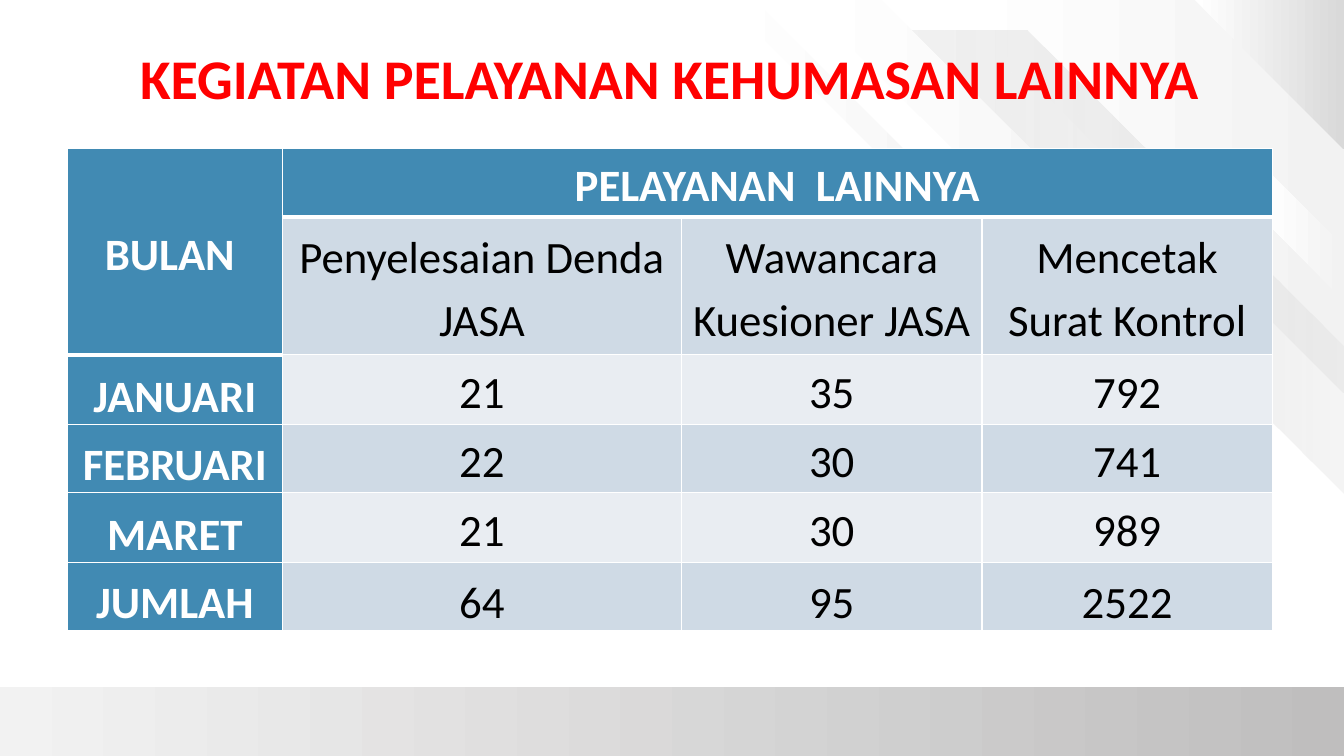
from dataclasses import dataclass

from lxml.etree import SubElement
from pptx import Presentation
from pptx.dml.color import RGBColor
from pptx.enum.shapes import MSO_SHAPE
from pptx.enum.text import MSO_ANCHOR, MSO_AUTO_SIZE, PP_ALIGN
from pptx.oxml.ns import qn
from pptx.util import Inches, Pt


@dataclass(frozen=True)
class Theme:
    font: str = "Calibri"
    title_size: int = 40
    table_size: int = 32
    title: str = "FF0000"
    header: str = "418AB3"
    header_text: str = "FFFFFF"
    body_text: str = "000000"
    bands: tuple = ("E9EDF2", "CFDAE5")
    rule: str = "FFFFFF"
    white: str = "FFFFFF"
    pale: str = "F2F2F2"
    grey: str = "D9D9D9"
    dark: str = "BFBEBE"


THEME = Theme()

# Content
TITLE = "KEGIATAN PELAYANAN KEHUMASAN LAINNYA"
ROWS = [
    ("BULAN ", "PELAYANAN  LAINNYA", "", ""),
    ("", "Penyelesaian Denda JASA", "Wawancara Kuesioner JASA", "Mencetak Surat Kontrol"),
    ("JANUARI", "21", "35", "792"),
    ("FEBRUARI", "22", "30", "741"),
    ("MARET", "21", "30", "989"),
    ("JUMLAH", "64", "95", "2522"),
]
COLUMN_WIDTHS = (2.13, 3.96, 2.98, 2.88)
ROW_HEIGHTS = (0.68, 1.37, 0.69, 0.68, 0.69, 0.68)
TABLE_LEFT, TABLE_TOP = 0.67, 1.47
WIDTH, HEIGHT = 13.33, 7.5
FOOTER_TOP = 6.82

# Background bands: outline, first colour, last colour, opacity of the last colour
BANDS = [
    ([(WIDTH, 0), (9.43, 0), (WIDTH, 3.9)], THEME.white, THEME.pale, 100),
    ([(WIDTH, 3.44), (10.19, 0.3), (8.71, 0.3), (WIDTH, 4.91)], THEME.pale, THEME.grey, 26),
    ([(WIDTH, 2.45), (12.49, 1.61), (12.49, 2.14), (WIDTH, 2.98)], THEME.white, THEME.pale, 100),
    ([(11.57, 2.82), (8.74, 0), (7.97, 0), (10.8, 2.82)], THEME.white, THEME.pale, 100),
    ([(WIDTH, 0), (11.85, 0), (WIDTH, 1.48)], THEME.white, THEME.grey, 100),
    ([(7.48, 0), (10.01, 2.53), (10.01, 2.82), (7.18, 0)], THEME.white, THEME.pale, 100),
]


def paint_gradient(shape, first, last, angle=0, last_opacity=100):
    shape.shadow.inherit = False
    shape.line.fill.background()
    shape.fill.gradient()
    shape.fill.gradient_angle = angle
    stops = shape.fill.gradient_stops
    for stop, colour in zip(stops, (first, last)):
        stop.color.rgb = RGBColor.from_string(colour)
    if last_opacity < 100:
        colour_node = list(shape.element.spPr.iter(qn("a:srgbClr")))[-1]
        SubElement(colour_node, qn("a:alpha"), val=str(last_opacity * 1000))


def style_paragraph(para, size, colour, bold):
    para.font.name = THEME.font
    para.font.size = Pt(size)
    para.font.bold = bold
    para.font.color.rgb = RGBColor.from_string(colour)


def add_background(page):
    footer = page.shapes.add_shape(
        MSO_SHAPE.RECTANGLE, 0, Inches(FOOTER_TOP), Inches(WIDTH), Inches(HEIGHT - FOOTER_TOP))
    paint_gradient(footer, THEME.dark, THEME.pale, angle=180)
    for outline, first, last, opacity in BANDS:
        points = [(Inches(x), Inches(y)) for x, y in outline]
        builder = page.shapes.build_freeform(*points[0])
        builder.add_line_segments(points[1:], close=True)
        paint_gradient(builder.convert_to_shape(), first, last, last_opacity=opacity)


def add_title(page):
    box = page.shapes.add_textbox(Inches(1.29), Inches(0.38), Inches(10.81), Inches(0.77))
    box.text_frame.word_wrap = False
    box.text_frame.auto_size = MSO_AUTO_SIZE.SHAPE_TO_FIT_TEXT
    para = box.text_frame.paragraphs[0]
    para.text = TITLE
    style_paragraph(para, THEME.title_size, THEME.title, True)


def set_borders(cell, top, bottom):
    properties = cell._tc.get_or_add_tcPr()
    for side, points in (("L", 1), ("R", 1), ("T", top), ("B", bottom)):
        line = SubElement(properties, qn(f"a:ln{side}"), w=str(Pt(points)))
        fill = SubElement(line, qn("a:solidFill"))
        SubElement(fill, qn("a:srgbClr"), val=THEME.rule)


def style_cell(cell, row, column):
    # The thick rule lies under the header, which is two rows deep in the first column
    header_end = 1 if column == 0 else 0
    set_borders(cell, top=3 if row == header_end + 1 else 1, bottom=3 if row <= header_end else 1)
    is_header = row == 0 or column == 0
    cell.fill.solid()
    cell.fill.fore_color.rgb = RGBColor.from_string(
        THEME.header if is_header else THEME.bands[row % 2])
    cell.margin_left = cell.margin_right = Inches(0.07)
    cell.margin_top = cell.margin_bottom = 0
    low = row == len(ROWS) - 1 or (column == 0 and row > 1)
    cell.vertical_anchor = MSO_ANCHOR.BOTTOM if low else MSO_ANCHOR.MIDDLE
    para = cell.text_frame.paragraphs[0]
    para.text = ROWS[row][column]
    para.alignment = PP_ALIGN.CENTER
    para.line_spacing = 1.15
    colour = THEME.header_text if is_header else THEME.body_text
    style_paragraph(para, THEME.table_size, colour, is_header)


def add_activity_table(page):
    frame = page.shapes.add_table(
        len(ROWS), len(COLUMN_WIDTHS), Inches(TABLE_LEFT), Inches(TABLE_TOP),
        Inches(sum(COLUMN_WIDTHS)), Inches(sum(ROW_HEIGHTS)))
    table = frame.table
    table.first_row = table.horz_banding = False
    for column, width in zip(table.columns, COLUMN_WIDTHS):
        column.width = Inches(width)
    for row, height in zip(table.rows, ROW_HEIGHTS):
        row.height = Inches(height)
    for row in range(len(ROWS)):
        for column in range(len(COLUMN_WIDTHS)):
            style_cell(table.cell(row, column), row, column)
    table.cell(0, 0).merge(table.cell(1, 0))
    table.cell(0, 1).merge(table.cell(0, 3))


def main():
    deck = Presentation()
    deck.slide_width, deck.slide_height = Inches(WIDTH), Inches(HEIGHT)
    page = deck.slides.add_slide(deck.slide_layouts[6])
    add_background(page)
    add_title(page)
    add_activity_table(page)
    deck.save("out.pptx")


if __name__ == "__main__":
    main()
